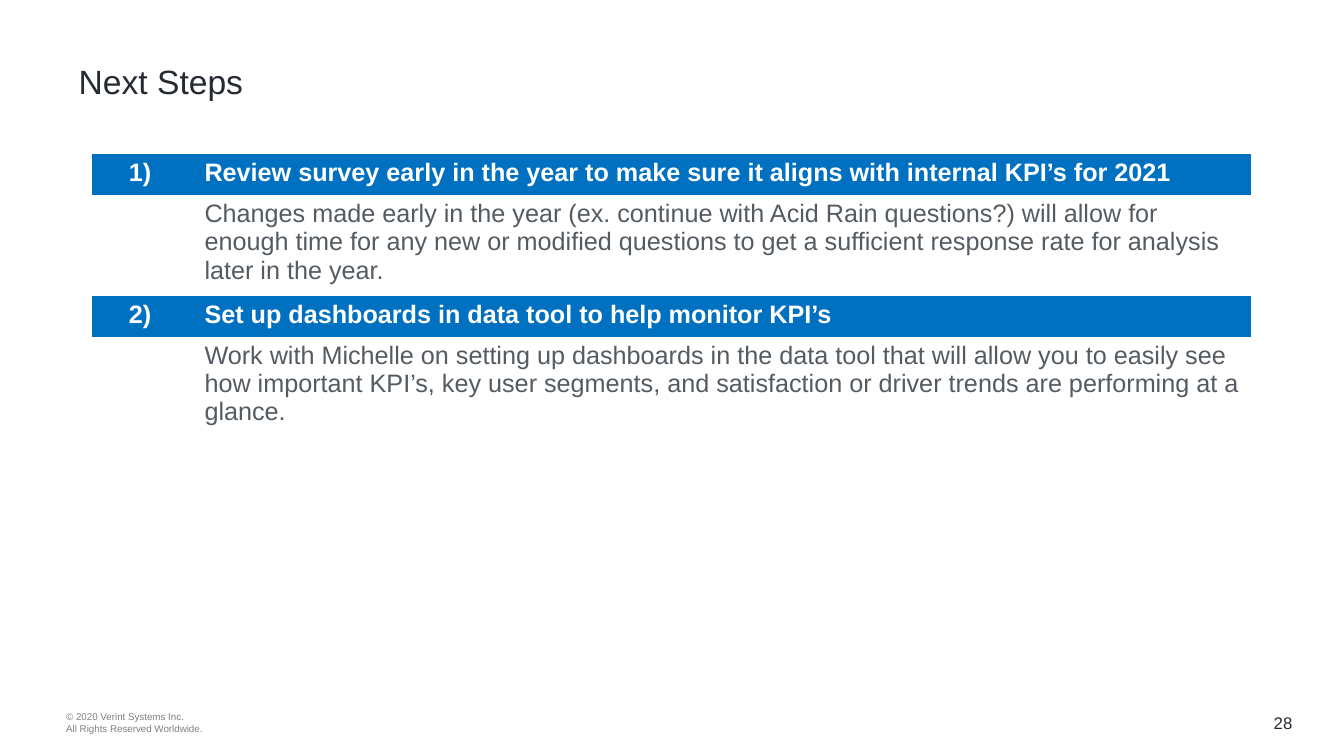
from dataclasses import dataclass

import pptx
import pptx.dml.color
import pptx.enum.text
import pptx.oxml.ns
import pptx.util

Cm = pptx.util.Cm
ALIGN = pptx.enum.text.PP_ALIGN
MIDDLE = pptx.enum.text.MSO_ANCHOR.MIDDLE
NO_STYLE_NO_GRID = "{2D5ABB26-0587-4C30-8999-92F81FD0307C}"


@dataclass(frozen=True)
class Theme:
    font: str = "Arial"
    dark: str = "262A32"
    body: str = "545B62"
    muted: str = "808080"
    white: str = "FFFFFF"
    blue: str = "0070C0"
    title_size: int = 24
    table_size: int = 18
    number_size: int = 12
    footer_size: int = 7


THEME = Theme()

STEPS = [
    ("Review survey early in the year to make sure it aligns with internal KPI’s for 2021",
     "Changes made early in the year (ex. continue with Acid Rain questions?) will allow for "
     "enough time for any new or modified questions to get a sufficient response rate for "
     "analysis later in the year."),
    ("Set up dashboards in data tool to help monitor KPI’s",
     "Work with Michelle on setting up dashboards in the data tool that will allow you to easily "
     "see how important KPI’s, key user segments, and satisfaction or driver trends are "
     "performing at a glance."),
]


def rgb(color):
    return pptx.dml.color.RGBColor.from_string(color)


def write(tf, lines, size, color, bold=False, align=ALIGN.LEFT):
    """Fill a text frame with one paragraph per line."""
    tf.word_wrap = True
    for i, line in enumerate(lines):
        p = tf.add_paragraph() if i else tf.paragraphs[0]
        p.alignment = align
        r = p.add_run()
        r.text = line
        r.font.name = THEME.font
        r.font.size = pptx.util.Pt(size)
        r.font.bold = bold
        r.font.color.rgb = rgb(color)


def set_title(s, text):
    sp = s.shapes.title
    sp.left, sp.top, sp.width, sp.height = Cm(1.73), Cm(0.89), Cm(30.99), Cm(2.29)
    sp.text_frame.vertical_anchor = MIDDLE
    write(sp.text_frame, [text], THEME.title_size, THEME.dark)


def add_label(s, left, width, lines, size, color, align=ALIGN.LEFT):
    sp = s.shapes.add_textbox(Cm(left), Cm(17.62), Cm(width), Cm(1.19))
    sp.text_frame.vertical_anchor = MIDDLE
    write(sp.text_frame, lines, size, color, align=align)


def add_steps_table(s, steps):
    """Give each step a blue heading row and a plain detail row."""
    head_height, detail_height = Cm(1.03), Cm(2.4)
    frame = s.shapes.add_table(2 * len(steps), 2, Cm(2.33), Cm(3.88), Cm(29.2),
                               (head_height + detail_height) * len(steps))
    table = frame.table
    table.first_row = table.horz_banding = False
    style = table._tbl.tblPr.find(pptx.oxml.ns.qn("a:tableStyleId"))
    style.text = NO_STYLE_NO_GRID
    table.columns[0].width, table.columns[1].width = Cm(2.57), Cm(26.63)

    for i, (heading, detail) in enumerate(steps):
        head, below = 2 * i, 2 * i + 1
        table.rows[head].height = head_height
        table.rows[below].height = detail_height
        for col in range(2):
            fill = table.cell(head, col).fill
            fill.solid()
            fill.fore_color.rgb = rgb(THEME.blue)
            table.cell(below, col).fill.background()
        write(table.cell(head, 0).text_frame, [f"{i + 1}) "], THEME.table_size,
              THEME.white, bold=True, align=ALIGN.CENTER)
        write(table.cell(head, 1).text_frame, [heading], THEME.table_size,
              THEME.white, bold=True)
        write(table.cell(below, 1).text_frame, [detail], THEME.table_size, THEME.body)


def main():
    prs = pptx.Presentation()
    prs.slide_width, prs.slide_height = Cm(33.87), Cm(19.05)
    s = prs.slides.add_slide(prs.slide_layouts[5])
    add_label(s, 1.42, 5.08, ["© 2020 Verint Systems Inc.", "All Rights Reserved Worldwide."],
              THEME.footer_size, THEME.muted)
    add_label(s, 30, 2.82, ["28"], THEME.number_size, THEME.dark, ALIGN.RIGHT)
    set_title(s, "Next Steps")
    add_steps_table(s, STEPS)
    prs.save("out.pptx")


if __name__ == "__main__":
    main()
